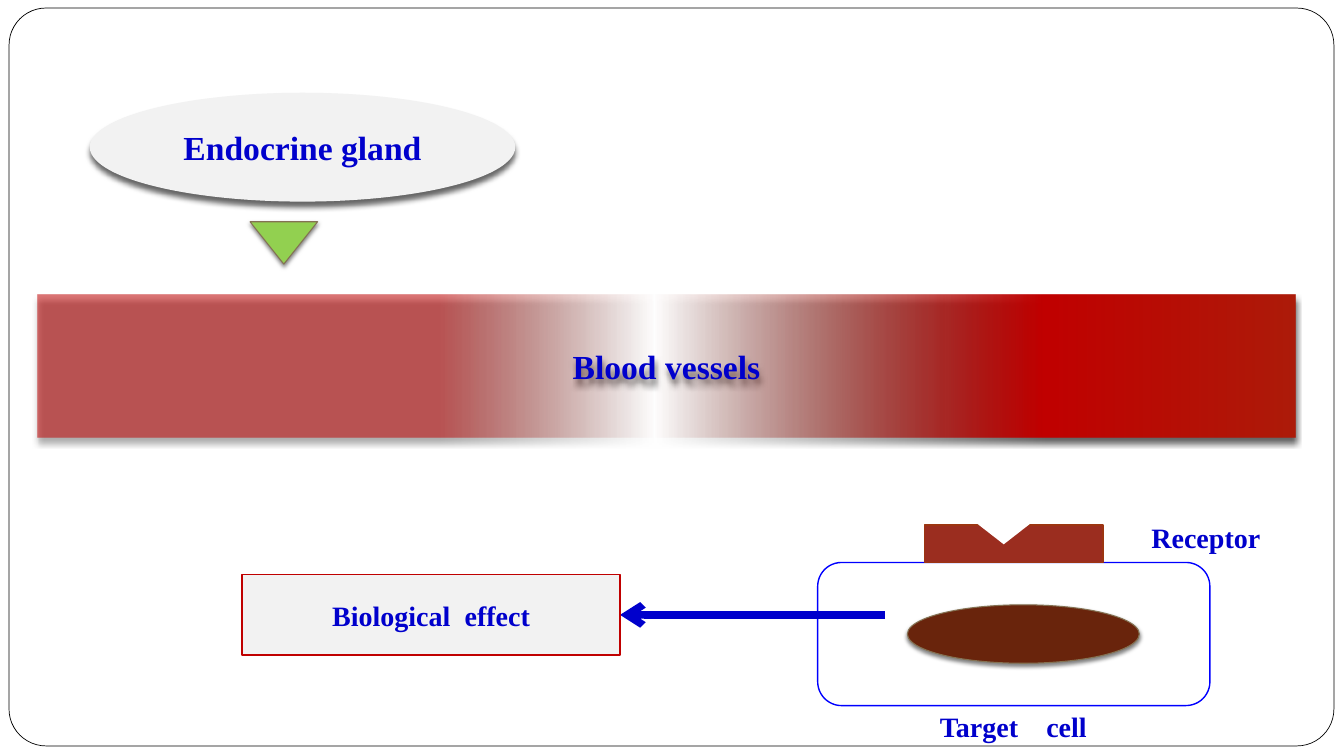
from lxml import etree
from pptx import Presentation
from pptx import util as u
from pptx.dml.color import RGBColor
from pptx.enum import shapes, text
from pptx.oxml import parse_xml
from pptx.oxml.ns import nsdecls, qn

FONT = "Times New Roman"
BLUE = "0000CC"
SHAPE = shapes.MSO_SHAPE


def color(hex_string):
    return RGBColor.from_string(hex_string)


def add_shadow(shape, opacity, blur, distance):
    """Cast a black shadow straight down; blur and distance in points."""
    effects = shape._element.spPr.find(qn("a:effectLst"))
    shadow = etree.SubElement(
        effects, qn("a:outerShdw"), blurRad=str(u.Pt(blur)),
        dist=str(u.Pt(distance)), dir="5400000", rotWithShape="0")
    black = etree.SubElement(shadow, qn("a:srgbClr"), val="000000")
    etree.SubElement(black, qn("a:alpha"), val=str(opacity * 1000))


def add_gradient(shape, stops):
    """Fill from left to right; each stop is position, colour, opacity."""
    marks = "".join(
        f'<a:gs pos="{position * 1000}"><a:srgbClr val="{tone}">'
        f'<a:alpha val="{opacity * 1000}"/></a:srgbClr></a:gs>'
        for position, tone, opacity in stops)
    gradient = parse_xml(
        f'<a:gradFill {nsdecls("a")} rotWithShape="1"><a:gsLst>{marks}</a:gsLst>'
        '<a:lin ang="0" scaled="0"/></a:gradFill>')
    properties = shape._element.spPr
    properties.replace(properties.find(qn("a:noFill")), gradient)


def add_part(slide, kind, box, fill=None, line=None, width=1.0,
             shadow=None, rotation=0):
    part = slide.shapes.add_shape(kind, *map(u.Inches, box))
    part.shadow.inherit = False
    part.rotation = rotation
    if fill:
        part.fill.solid()
        part.fill.fore_color.rgb = color(fill)
    else:
        part.fill.background()
    if line:
        part.line.color.rgb = color(line)
        part.line.width = u.Pt(width)
    else:
        part.line.fill.background()
    if shadow:
        add_shadow(part, *shadow)
    return part


def write(part, wording, size, gap=0):
    """Centre a bold label; gap widens the space between words, in points."""
    frame = part.text_frame
    frame.word_wrap = True
    frame.vertical_anchor = text.MSO_ANCHOR.MIDDLE
    paragraph = frame.paragraphs[0]
    paragraph.alignment = text.PP_ALIGN.CENTER
    for piece in wording.partition(" "):
        if not piece:
            continue
        run = paragraph.add_run()
        run.text = piece
        run.font.name = FONT
        run.font.size = u.Pt(size)
        run.font.bold = True
        run.font.color.rgb = color(BLUE)
        if piece == " " and gap:
            run.font._element.set("spc", str(gap * 100))


def add_label(slide, box, wording, gap=0):
    label = slide.shapes.add_textbox(*map(u.Inches, box))
    write(label, wording, 20, gap)


def add_arrow(slide, start, end):
    arrow = slide.shapes.add_connector(
        shapes.MSO_CONNECTOR.STRAIGHT, *map(u.Inches, start + end))
    arrow.line.color.rgb = color(BLUE)
    arrow.line.width = u.Pt(5.25)
    etree.SubElement(arrow.line._get_or_add_ln(), qn("a:tailEnd"), type="arrow")
    etree.SubElement(arrow._element.spPr, qn("a:effectLst"))


def main():
    deck = Presentation()
    deck.slide_width, deck.slide_height = u.Inches(13.33), u.Inches(7.5)
    slide = deck.slides.add_slide(deck.slide_layouts[6])
    deep_shadow, soft_shadow = (60, 4, 4), (50, 3, 2)

    # Slide frame
    frame = add_part(slide, SHAPE.ROUNDED_RECTANGLE, (0.09, 0.08, 13.14, 7.32),
                     "FFFFFF", "000000", 0.5)
    frame.adjustments[0] = 0.05

    # Blood vessels
    vessels = add_part(slide, SHAPE.RECTANGLE, (0.37, 2.92, 12.48, 1.42),
                       shadow=deep_shadow)
    add_gradient(vessels, [(32, "C00000", 52), (49, "821709", 0),
                           (80, "C00000", 100), (100, "AC1B09", 100)])
    write(vessels, "Blood vessels", 24)

    # Gland and the hormone it releases
    gland = add_part(slide, SHAPE.OVAL, (0.89, 0.92, 4.22, 1.08), "F2F2F2",
                     shadow=deep_shadow)
    write(gland, "Endocrine gland", 24)

    # Target cell with nucleus and notched receptor
    add_part(slide, SHAPE.ROUNDED_RECTANGLE, (8.11, 5.58, 3.89, 1.42),
             "FFFFFF", "0000FF")
    add_part(slide, SHAPE.OVAL, (9, 6, 2.3, 0.58), "69240C", "847253", 0.75,
             soft_shadow)
    add_part(slide, SHAPE.RECTANGLE, (9.17, 5.21, 1.77, 0.37), "9B2D1F", "9C3511")
    add_part(slide, SHAPE.ISOSCELES_TRIANGLE, (9.66, 5.17, 0.59, 0.23), "FFFFFF",
             rotation=180)
    add_part(slide, SHAPE.ISOSCELES_TRIANGLE, (2.48, 2.2, 0.67, 0.42), "92D050",
             "847253", 0.75, soft_shadow, 180)

    # Resulting effect
    add_arrow(slide, (8.78, 6.1), (6.15, 6.1))
    effect = add_part(slide, SHAPE.RECTANGLE, (2.4, 5.7, 3.75, 0.8), "F2F2F2",
                      "C00000")
    write(effect, "Biological effect", 20, gap=5)

    # Captions
    add_label(slide, (11, 5.08, 1.92, 0.51), "Receptor")
    add_label(slide, (8.44, 7.08, 3.22, 0.25), "Target cell", gap=15)

    deck.save("out.pptx")


if __name__ == "__main__":
    main()
